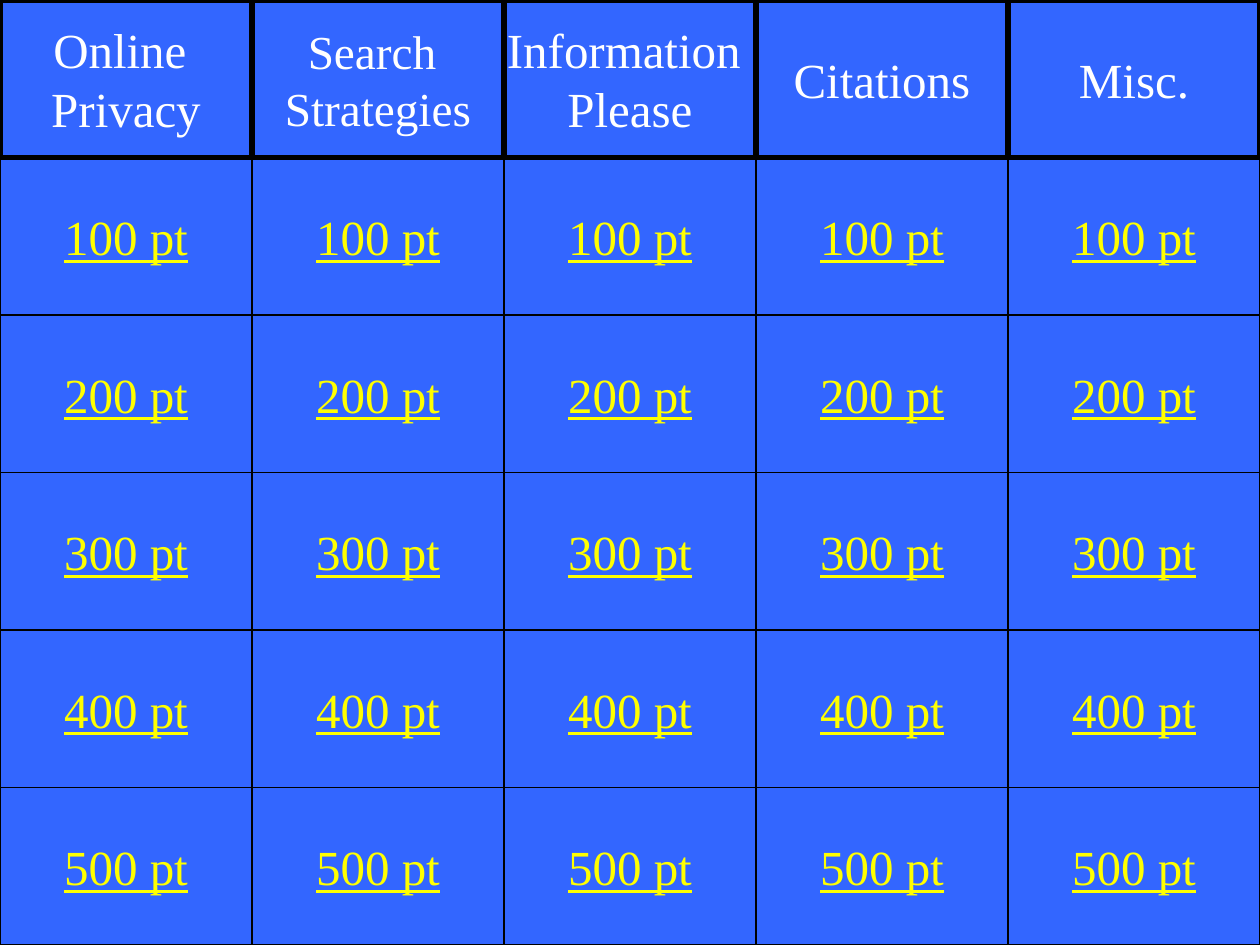
from dataclasses import dataclass

from pptx import Presentation
from pptx import util as u
from pptx.dml.color import RGBColor
from pptx.enum import shapes, text


@dataclass(frozen=True)
class Theme:
    font: str = "Times New Roman"
    board: str = "3366FF"
    border: str = "000000"
    heading: str = "FFFFFF"
    points: str = "FFFF00"
    size: float = 28
    tight_size: float = 27
    thin: float = 0.75
    thick: float = 3


def write(tf, lines, *, font, size, color, underline=None):
    """Fill a text frame with one centred paragraph per line."""
    tf.word_wrap = False
    tf.vertical_anchor = text.MSO_ANCHOR.MIDDLE
    for i, line in enumerate(lines):
        p = tf.paragraphs[0] if i == 0 else tf.add_paragraph()
        p.alignment = text.PP_ALIGN.CENTER
        r = p.add_run()
        r.text = line
        r.font.name = font
        r.font.size = u.Pt(size)
        r.font.color.rgb = RGBColor.from_string(color)
        r.font.underline = underline


class Board:
    """A slide split into equal columns and rows."""

    def __init__(self, prs, theme, columns, rows):
        self.theme = theme
        self.cell_w = prs.slide_width // columns
        self.cell_h = prs.slide_height // rows
        self.s = prs.slides.add_slide(prs.slide_layouts[6])
        fill = self.s.background.fill
        fill.solid()
        fill.fore_color.rgb = RGBColor.from_string(theme.board)

    def cell(self, kind, column, row, line_width):
        sp = self.s.shapes.add_shape(kind, column * self.cell_w, row * self.cell_h,
                                     self.cell_w, self.cell_h)
        sp.shadow.inherit = False
        sp.fill.solid()
        sp.fill.fore_color.rgb = RGBColor.from_string(self.theme.board)
        sp.line.color.rgb = RGBColor.from_string(self.theme.border)
        sp.line.width = u.Pt(line_width)
        return sp

    def button(self, column, row, label):
        t = self.theme
        sp = self.cell(shapes.MSO_SHAPE.ACTION_BUTTON_CUSTOM, column, row, t.thin)
        write(sp.text_frame, [label], font=t.font, size=t.size,
              color=t.points, underline=True)

    def category(self, column, lines, size):
        t = self.theme
        sp = self.cell(shapes.MSO_SHAPE.RECTANGLE, column, 0, t.thick)
        write(sp.text_frame, lines, font=t.font, size=size, color=t.heading)


def main():
    theme = Theme()
    categories = [
        (["Online ", "Privacy"], theme.size),
        (["Search ", "Strategies"], theme.tight_size),
        (["Information ", "Please"], theme.size),
        (["Citations"], theme.size),
        (["Misc."], theme.size),
    ]
    levels = 5

    prs = Presentation()
    prs.slide_width, prs.slide_height = u.Inches(10), u.Inches(7.5)
    board = Board(prs, theme, len(categories), levels + 1)

    for column in range(len(categories)):
        for row in range(1, levels + 1):
            board.button(column, row, f"{row * 100} pt")
    for column, (lines, size) in enumerate(categories):
        board.category(column, lines, size)

    prs.save("out.pptx")


if __name__ == "__main__":
    main()
